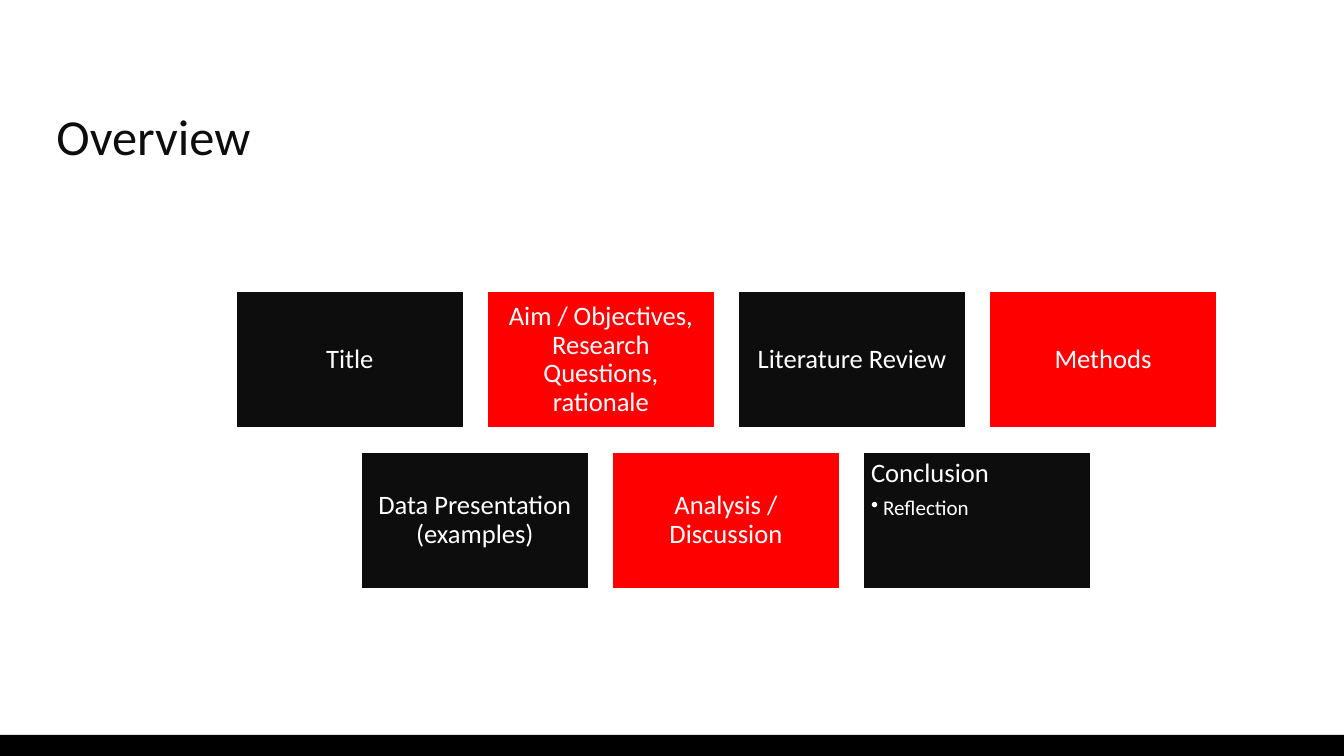
from lxml import etree
from pptx import Presentation
from pptx.dml.color import RGBColor
from pptx.enum.shapes import MSO_SHAPE
from pptx.enum.text import MSO_ANCHOR, MSO_AUTO_SIZE, PP_ALIGN
from pptx.oxml.ns import qn
from pptx.util import Inches, Pt

RECTANGLE = MSO_SHAPE.RECTANGLE
TOP, MIDDLE = MSO_ANCHOR.TOP, MSO_ANCHOR.MIDDLE
LEFT, CENTER = PP_ALIGN.LEFT, PP_ALIGN.CENTER
NO_AUTOFIT = MSO_AUTO_SIZE.NONE

FONT = "Calibri"
BLACK, DARK, RED, WHITE = "000000", "0D0D0D", "FF0000", "FFFFFF"
SLIDE_WIDTH, SLIDE_HEIGHT = 13.33, 7.5
CARD_WIDTH, CARD_HEIGHT = 2.26, 1.36
COLUMN_STEP = 2.49
CARD_ROWS = [
    (2.34, 2.89, ["Title", "Aim / Objectives, Research Questions, rationale",
                  "Literature Review", "Methods"]),
    (3.58, 4.48, ["Data Presentation (examples)", "Analysis / Discussion",
                  "Conclusion"]),
]


def color(hex_string):
    return RGBColor.from_string(hex_string)


def format_paragraph(paragraph, size, hex_string, alignment=LEFT):
    paragraph.alignment = alignment
    paragraph.line_spacing = 0.9
    for run in paragraph.runs:
        run.font.name = FONT
        run.font.size = Pt(size)
        run.font.color.rgb = color(hex_string)


def set_margins(text_frame, horizontal, vertical):
    text_frame.margin_left = text_frame.margin_right = Inches(horizontal)
    text_frame.margin_top = text_frame.margin_bottom = Inches(vertical)


def add_title(slide, text):
    title = slide.shapes.title
    title.left, title.top = Inches(0.56), Inches(1.06)
    title.width, title.height = Inches(12.21), Inches(0.79)
    text_frame = title.text_frame
    text_frame.text = text
    text_frame.auto_size = NO_AUTOFIT
    text_frame.vertical_anchor = TOP
    set_margins(text_frame, 0, 0.05)
    format_paragraph(text_frame.paragraphs[0], 36, DARK)


def add_rectangle(slide, left, top, width, height, fill):
    shape = slide.shapes.add_shape(
        RECTANGLE, Inches(left), Inches(top), Inches(width), Inches(height))
    shape.shadow.inherit = False
    shape.fill.solid()
    shape.fill.fore_color.rgb = color(fill)
    shape.line.fill.background()
    return shape


def add_card(slide, left, top, text, fill):
    card = add_rectangle(slide, left, top, CARD_WIDTH, CARD_HEIGHT, fill)
    card.line.color.rgb = color(WHITE)
    card.line.width = Pt(1.5)
    text_frame = card.text_frame
    text_frame.text = text
    text_frame.word_wrap = True
    text_frame.vertical_anchor = MIDDLE
    set_margins(text_frame, 0.08, 0.08)
    format_paragraph(text_frame.paragraphs[0], 19, WHITE, CENTER)
    return card


def add_bullet(card, text):
    text_frame = card.text_frame
    text_frame.vertical_anchor = TOP
    heading = text_frame.paragraphs[0]
    heading.alignment = LEFT
    heading.space_after = Pt(6.65)
    paragraph = text_frame.add_paragraph()
    paragraph.text = text
    paragraph.level = 1
    properties = paragraph._p.get_or_add_pPr()
    properties.set("marL", str(Inches(0.12)))
    properties.set("indent", str(Inches(-0.12)))
    etree.SubElement(properties, qn("a:buChar")).set("char", "•")
    format_paragraph(paragraph, 15, WHITE)


def main():
    presentation = Presentation()
    presentation.slide_width = Inches(SLIDE_WIDTH)
    presentation.slide_height = Inches(SLIDE_HEIGHT)
    slide = presentation.slides.add_slide(presentation.slide_layouts[5])

    add_rectangle(slide, 0, 7.29, SLIDE_WIDTH, 0.21, BLACK)
    add_title(slide, "Overview")
    for row_left, top, labels in CARD_ROWS:
        for column, label in enumerate(labels):
            fill = RED if column % 2 else DARK
            card = add_card(slide, row_left + column * COLUMN_STEP, top, label, fill)
    add_bullet(card, "Reflection")

    presentation.save("out.pptx")


if __name__ == "__main__":
    main()
